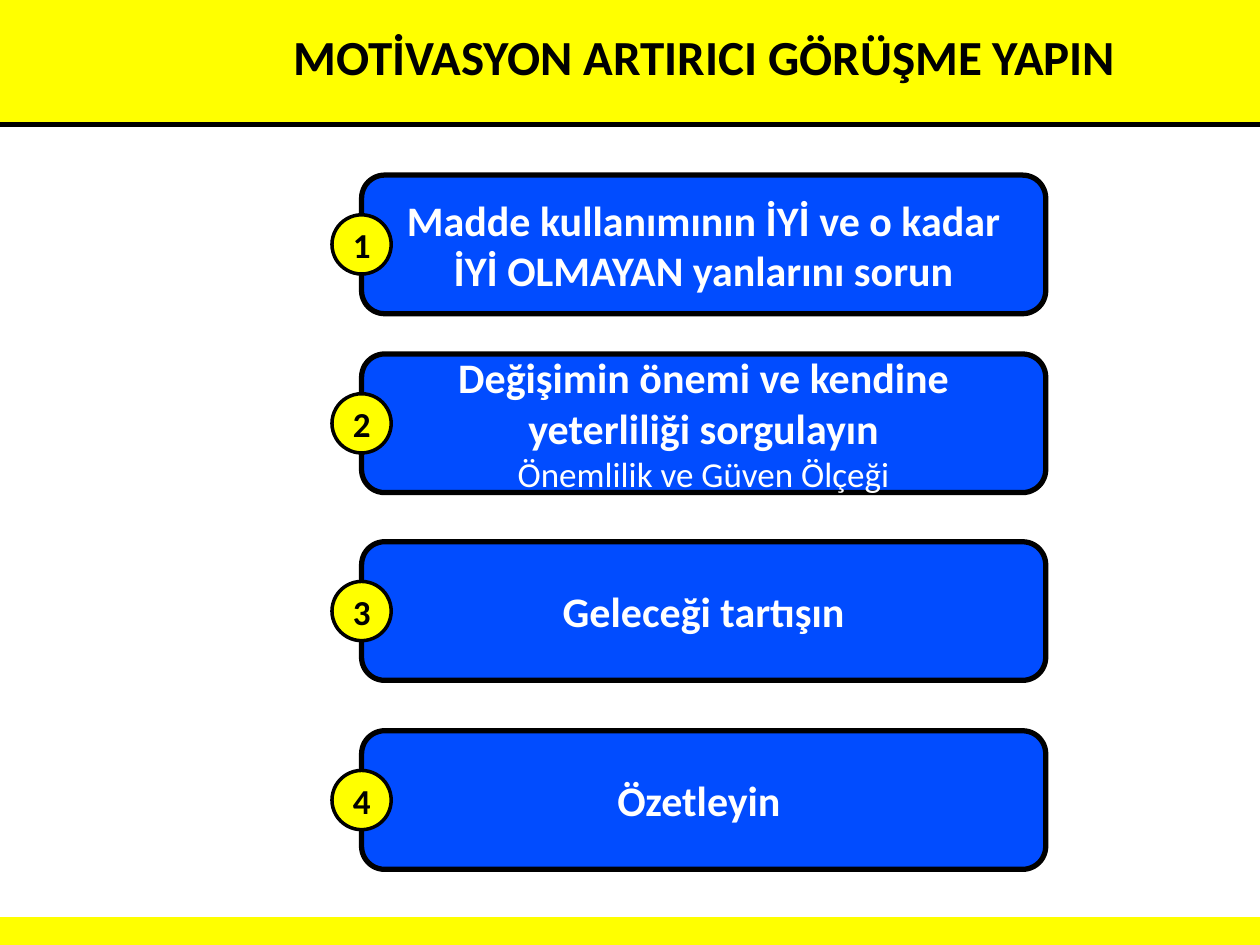
from pptx import Presentation
from pptx.dml.color import RGBColor
from pptx.enum.shapes import MSO_CONNECTOR, MSO_SHAPE
from pptx.enum.text import MSO_ANCHOR, PP_ALIGN
from pptx.oxml.ns import qn
from pptx.util import Inches, Pt

RECTANGLE = MSO_SHAPE.RECTANGLE
ROUNDED = MSO_SHAPE.ROUNDED_RECTANGLE
OVAL = MSO_SHAPE.OVAL

YELLOW, BLUE, BLACK, WHITE = "FFFF00", "014CFF", "000000", "FFFFFF"
FONT = "Calibri"

TITLE = "MOTİVASYON ARTIRICI GÖRÜŞME YAPIN"
# Box top, then its lines as (text, size, bold)
STEPS = [
    (1.39, [("Madde kullanımının İYİ ve o kadar İYİ OLMAYAN yanlarını sorun", 24, True)]),
    (2.81, [("Değişimin önemi ve kendine yeterliliği sorgulayın", 24, True),
            ("Önemlilik ve Güven Ölçeği", 20, False)]),
    (4.3, [("Geleceği tartışın", 24, True)]),
    (5.8, [("Özetleyin ", 24, True)]),
]

SLIDE_WIDTH, SLIDE_HEIGHT = 10, 7.5
HEADER_HEIGHT, FOOTER_HEIGHT = 0.99, 0.21
BOX_LEFT, BOX_WIDTH, BOX_HEIGHT = 2.87, 5.43, 1.1
BADGE_SIZE = 0.47


def color(hex_code):
    return RGBColor.from_string(hex_code)


def write(shape, lines, text_color):
    frame = shape.text_frame
    frame.word_wrap = True
    frame.vertical_anchor = MSO_ANCHOR.MIDDLE
    frame.text = "\n".join(text for text, _, _ in lines)
    for para, (_, size, bold) in zip(frame.paragraphs, lines):
        para.alignment = PP_ALIGN.CENTER
        for span in para.runs:
            span.font.name = FONT
            span.font.size = Pt(size)
            span.font.bold = bold
            span.font.color.rgb = color(text_color)


def add_block(page, kind, left, top, width, height, fill, line, line_width):
    shape = page.shapes.add_shape(
        kind, Inches(left), Inches(top), Inches(width), Inches(height))
    shape.shadow.inherit = False
    shape.fill.solid()
    shape.fill.fore_color.rgb = color(fill)
    shape.line.color.rgb = color(line)
    shape.line.width = Pt(line_width)
    return shape


def add_frame(page):
    """Draw the header and footer bands, the header rule and the title."""
    for top, height in [(0, HEADER_HEIGHT),
                        (SLIDE_HEIGHT - FOOTER_HEIGHT, FOOTER_HEIGHT)]:
        add_block(page, RECTANGLE, 0, top, SLIDE_WIDTH, height, YELLOW, YELLOW, 2)

    rule = page.shapes.add_connector(
        MSO_CONNECTOR.STRAIGHT, 0, Inches(HEADER_HEIGHT),
        Inches(SLIDE_WIDTH), Inches(HEADER_HEIGHT))
    rule.line.color.rgb = color(BLACK)
    rule.line.width = Pt(3)
    properties = rule._element.spPr
    properties.append(properties.makeelement(qn("a:effectLst"), {}))

    title = page.shapes.add_textbox(
        Inches(0.59), Inches(-0.18), Inches(10), Inches(1.25))
    write(title, [(TITLE, 28, True)], BLACK)


def add_steps(page):
    for top, lines in STEPS:
        box = add_block(page, ROUNDED, BOX_LEFT, top, BOX_WIDTH, BOX_HEIGHT,
                        BLUE, BLACK, 3)
        write(box, lines, WHITE)

    for number, (top, _) in enumerate(STEPS, 1):
        badge = add_block(page, OVAL, BOX_LEFT - BADGE_SIZE / 2,
                          top + (BOX_HEIGHT - BADGE_SIZE) / 2,
                          BADGE_SIZE, BADGE_SIZE, YELLOW, BLACK, 2)
        write(badge, [(str(number), 20, True)], BLACK)


def main():
    deck = Presentation()
    deck.slide_width = Inches(SLIDE_WIDTH)
    deck.slide_height = Inches(SLIDE_HEIGHT)
    page = deck.slides.add_slide(deck.slide_layouts[6])
    add_frame(page)
    add_steps(page)
    deck.save("out.pptx")


if __name__ == "__main__":
    main()
